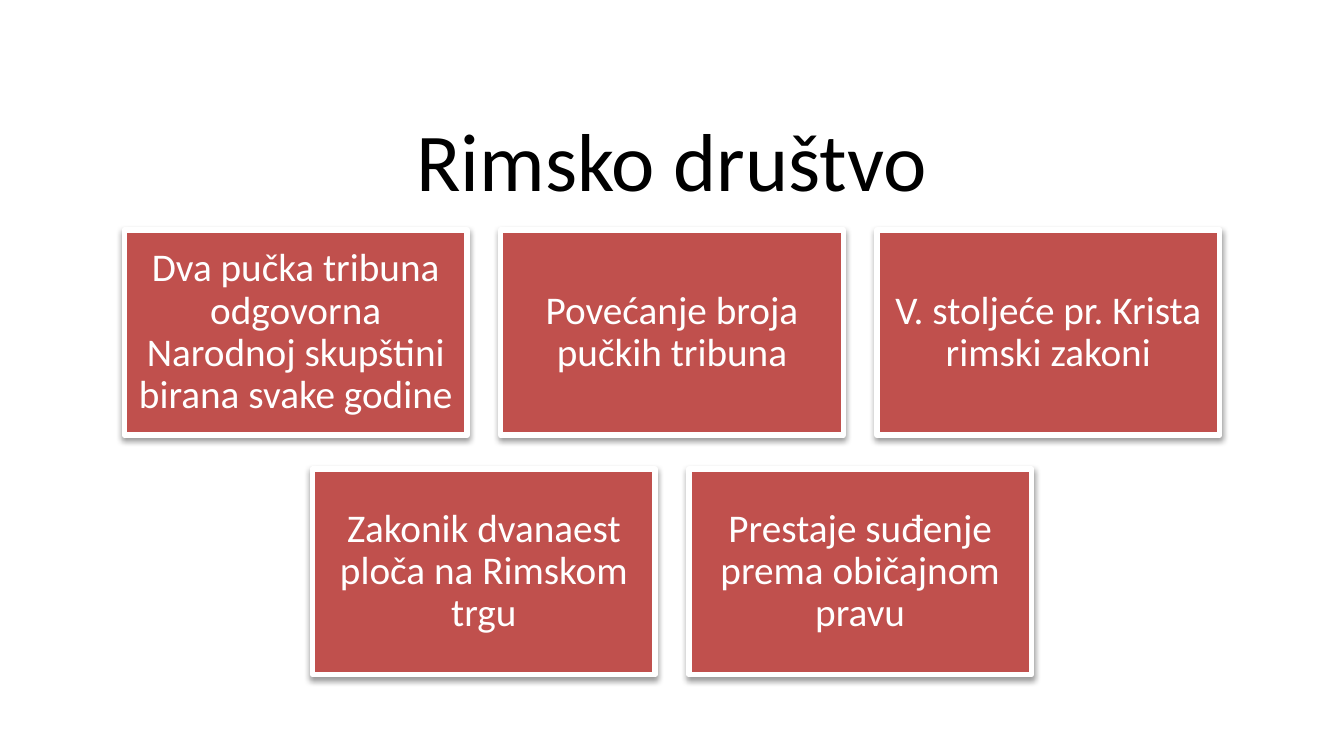
from dataclasses import dataclass

from lxml.etree import SubElement
from pptx import Presentation
from pptx.dml.color import RGBColor
from pptx.enum.shapes import MSO_SHAPE
from pptx.enum.text import MSO_ANCHOR, PP_ALIGN
from pptx.oxml.ns import qn
from pptx.shapes.autoshape import Shape
from pptx.slide import Slide
from pptx.text.text import TextFrame
from pptx.util import Inches, Pt


@dataclass(frozen=True)
class Theme:
    font: str = "Calibri"
    title_size: float = 44
    card_size: float = 21
    title_color: str = "000000"
    card_fill: str = "C0504D"
    card_text: str = "FFFFFF"
    card_border: str = "FFFFFF"
    shadow: str = "000000"


@dataclass(frozen=True)
class Card:
    text: str
    left: float
    top: float


THEME = Theme()
SLIDE_WIDTH = 10
SLIDE_HEIGHT = SLIDE_WIDTH * 9 / 16
CARD_WIDTH, CARD_HEIGHT = 2.55, 1.53
CARD_GAP = 0.25
CARDS_TOP = 1.71
CARD_ROWS = (
    (
        "Dva pučka tribuna odgovorna Narodnoj skupštini birana svake godine",
        "Povećanje broja pučkih tribuna",
        "V. stoljeće pr. Krista rimski zakoni",
    ),
    (
        "Zakonik dvanaest ploča na Rimskom trgu",
        "Prestaje suđenje prema običajnom pravu",
    ),
)


def write_text(
    frame: TextFrame, text: str, *, size: float, color: str, side_inset: float, end_inset: float
) -> None:
    frame.word_wrap = True
    frame.vertical_anchor = MSO_ANCHOR.MIDDLE
    frame.margin_left = frame.margin_right = Inches(side_inset)
    frame.margin_top = frame.margin_bottom = Inches(end_inset)
    para = frame.paragraphs[0]
    para.alignment = PP_ALIGN.CENTER
    para.line_spacing = 0.9
    span = para.add_run()
    span.text = text
    span.font.name = THEME.font
    span.font.size = Pt(size)
    span.font.color.rgb = RGBColor.from_string(color)


def add_shadow(box: Shape) -> None:
    box.shadow.inherit = False
    effects = box.element.spPr.find(qn("a:effectLst"))
    shadow = SubElement(
        effects,
        qn("a:outerShdw"),
        blurRad=str(Pt(3.1)),
        dist=str(Pt(1.6)),
        dir="5400000",
        rotWithShape="0",
    )
    color = SubElement(shadow, qn("a:srgbClr"), val=THEME.shadow)
    SubElement(color, qn("a:alpha"), val="38000")


def add_title(page: Slide, text: str) -> None:
    title = page.shapes.title
    title.left, title.top = Inches(0.5), Inches(0.84)
    title.width, title.height = Inches(9), Inches(0.78)
    write_text(
        title.text_frame,
        text,
        size=THEME.title_size,
        color=THEME.title_color,
        side_inset=0.1,
        end_inset=0.05,
    )


def add_card(page: Slide, card: Card) -> None:
    box = page.shapes.add_shape(
        MSO_SHAPE.RECTANGLE,
        Inches(card.left),
        Inches(card.top),
        Inches(CARD_WIDTH),
        Inches(CARD_HEIGHT),
    )
    box.fill.solid()
    box.fill.fore_color.rgb = RGBColor.from_string(THEME.card_fill)
    box.line.color.rgb = RGBColor.from_string(THEME.card_border)
    box.line.width = Pt(3)
    add_shadow(box)
    write_text(
        box.text_frame,
        card.text,
        size=THEME.card_size,
        color=THEME.card_text,
        side_inset=0.09,
        end_inset=0.09,
    )


def arrange_cards() -> list[Card]:
    cards = []
    for row, texts in enumerate(CARD_ROWS):
        row_width = len(texts) * (CARD_WIDTH + CARD_GAP) - CARD_GAP
        row_left = (SLIDE_WIDTH - row_width) / 2
        top = CARDS_TOP + row * (CARD_HEIGHT + CARD_GAP)
        for column, text in enumerate(texts):
            cards.append(Card(text, row_left + column * (CARD_WIDTH + CARD_GAP), top))
    return cards


def main() -> None:
    deck = Presentation()
    deck.slide_width, deck.slide_height = Inches(SLIDE_WIDTH), Inches(SLIDE_HEIGHT)
    page = deck.slides.add_slide(deck.slide_layouts[5])
    add_title(page, "Rimsko društvo")
    for card in arrange_cards():
        add_card(page, card)
    deck.save("out.pptx")


if __name__ == "__main__":
    main()
